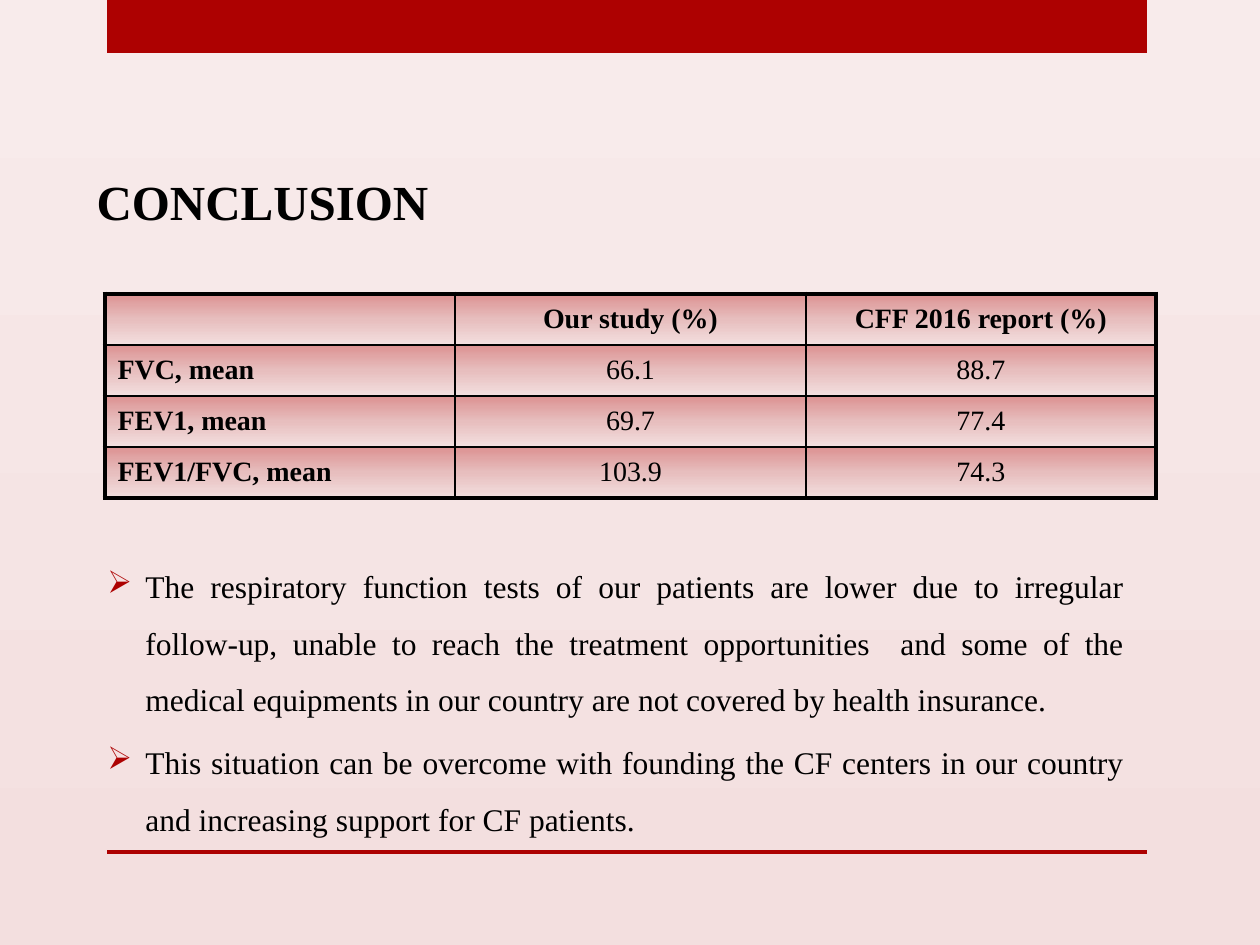
from pptx import Presentation
from pptx.dml.color import RGBColor
from pptx.enum.shapes import MSO_SHAPE as Shape
from pptx.enum.text import MSO_ANCHOR as Anchor, MSO_AUTO_SIZE as AutoSize, PP_ALIGN as Align
from pptx.oxml import parse_xml
from pptx.oxml.ns import nsdecls, qn
from pptx.util import Pt

PX = 914400 // 126
FONT = "Times New Roman"
RED = RGBColor(0xAD, 0x01, 0x01)
BLACK = RGBColor(0, 0, 0)
ROSE = RGBColor(0xDC, 0x92, 0x92)
MIDDLE_ROSE = RGBColor(0xE7, 0xBE, 0xBE)
PALE_ROSE = RGBColor(0xF3, 0xDF, 0xDF)
LIGHT_ROSE = RGBColor(0xF8, 0xEB, 0xEB)

BARS = [(107, 0, 1040, 53), (107, 850, 1040, 4)]
TITLE = "CONCLUSION"
TITLE_BOX = (84, 165, 983, 72)
ROWS = [
    ("", "Our study (%)", "CFF 2016 report (%)"),
    ("FVC, mean", "66.1", "88.7"),
    ("FEV1, mean", "69.7", "77.4"),
    ("FEV1/FVC, mean", "103.9", "74.3"),
]
TABLE_BOX = (105, 294, 1051, 204)
POINTS = [
    "The respiratory function tests of our patients are lower due to irregular follow-up, "
    "unable to reach the treatment opportunities  and some of the medical equipments in our "
    "country are not covered by health insurance.",
    "This situation can be overcome with founding the CF centers in our country and "
    "increasing support for CF patients.",
]
POINTS_BOX = (95, 542, 1042, 300)
INDENT = 38
THIN, THICK = Pt(1.5), Pt(3)


def emu(box):
    return [length * PX for length in box]


def add_run(paragraph, text, size, bold=False):
    run = paragraph.add_run()
    run.text = text
    font = run.font
    font.name, font.size, font.bold = FONT, Pt(size), bold
    font.color.rgb = BLACK


def gradient_xml(colors):
    """Return a top-to-bottom gradient with evenly spaced stops."""
    step = 100000 // (len(colors) - 1)
    stops = "".join(
        f'<a:gs pos="{index * step}"><a:srgbClr val="{color}"/></a:gs>'
        for index, color in enumerate(colors))
    return parse_xml(
        f'<a:gradFill {nsdecls("a")} rotWithShape="1"><a:gsLst>{stops}</a:gsLst>'
        '<a:lin ang="5400000" scaled="0"/></a:gradFill>')


def border_xml(side, width):
    return parse_xml(
        f'<a:ln{side} {nsdecls("a")} w="{width}"><a:solidFill>'
        f'<a:srgbClr val="{BLACK}"/></a:solidFill></a:ln{side}>')


def add_bars(slide):
    for box in BARS:
        bar = slide.shapes.add_shape(Shape.RECTANGLE, *emu(box))
        bar.shadow.inherit = False
        bar.fill.solid()
        bar.fill.fore_color.rgb = RED
        bar.line.fill.background()


def add_title(slide):
    title = slide.shapes.title
    title.left, title.top, title.width, title.height = emu(TITLE_BOX)
    frame = title.text_frame
    frame.word_wrap = True
    frame.auto_size = AutoSize.SHAPE_TO_FIT_TEXT
    frame.vertical_anchor = Anchor.TOP
    paragraph = frame.paragraphs[0]
    paragraph.alignment = Align.LEFT
    add_run(paragraph, TITLE, 28, bold=True)


def add_results_table(slide):
    last_row, last_column = len(ROWS) - 1, len(ROWS[0]) - 1
    table = slide.shapes.add_table(len(ROWS), len(ROWS[0]), *emu(TABLE_BOX)).table
    for row, values in enumerate(ROWS):
        for column, text in enumerate(values):
            cell = table.cell(row, column)
            cell.vertical_anchor = Anchor.MIDDLE
            paragraph = cell.text_frame.paragraphs[0]
            paragraph.alignment = Align.CENTER if column else Align.LEFT
            if text:
                add_run(paragraph, text, 16, bold=row == 0 or column == 0)
            outer = {"L": column == 0, "R": column == last_column,
                     "T": row == 0, "B": row == last_row}
            properties = cell._tc.get_or_add_tcPr()
            for side, is_outer in outer.items():
                properties.append(border_xml(side, THICK if is_outer else THIN))
            properties.append(gradient_xml([ROSE, MIDDLE_ROSE, PALE_ROSE]))


def add_points(slide):
    frame = slide.shapes.add_textbox(*emu(POINTS_BOX)).text_frame
    frame.word_wrap = True
    frame.auto_size = AutoSize.SHAPE_TO_FIT_TEXT
    for index, text in enumerate(POINTS):
        paragraph = frame.add_paragraph() if index else frame.paragraphs[0]
        paragraph.alignment = Align.JUSTIFY
        paragraph.line_spacing = 1.5
        paragraph.space_before = Pt(3.6)
        properties = paragraph._p.get_or_add_pPr()
        properties.set("marL", str(INDENT * PX))
        properties.set("indent", str(-INDENT * PX))
        properties.append(parse_xml(
            f'<a:buClr {nsdecls("a")}><a:srgbClr val="{RED}"/></a:buClr>'))
        properties.append(parse_xml(f'<a:buChar {nsdecls("a")} char="➢"/>'))
        add_run(paragraph, text, 18)


def main():
    presentation = Presentation()
    presentation.slide_width, presentation.slide_height = emu((1260, 945))
    slide = presentation.slides.add_slide(presentation.slide_layouts[5])
    background = slide.background.fill
    background.gradient()
    background.gradient_angle = 270
    for stop, color in zip(background.gradient_stops, (LIGHT_ROSE, PALE_ROSE)):
        stop.color.rgb = color
    add_bars(slide)
    add_results_table(slide)
    add_title(slide)
    add_points(slide)
    presentation.save("out.pptx")


if __name__ == "__main__":
    main()
